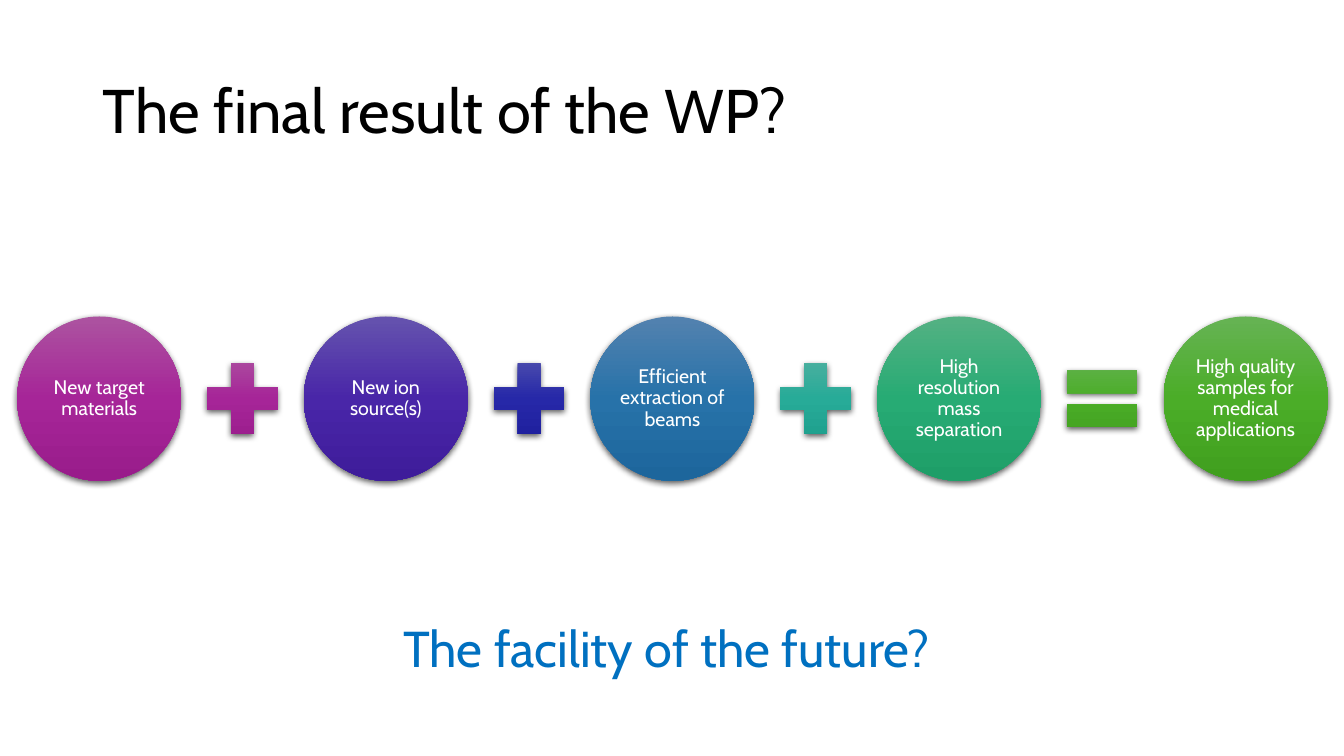
from dataclasses import dataclass

from pptx import Presentation
from pptx.dml.color import RGBColor
from pptx.enum.shapes import MSO_SHAPE
from pptx.enum.text import MSO_ANCHOR, MSO_AUTO_SIZE, PP_ALIGN
from pptx.oxml import parse_xml
from pptx.oxml.ns import nsdecls, qn
from pptx.shapes.autoshape import Shape
from pptx.slide import Slide
from pptx.text.text import TextFrame
from pptx.util import Inches, Pt

SLIDE_WIDTH, SLIDE_HEIGHT = 13.33, 7.5


@dataclass(frozen=True)
class Gradient:
    top: str
    middle: str
    bottom: str


@dataclass(frozen=True)
class Theme:
    font: str = "Cabin"
    title_size: int = 44
    closing_size: int = 36
    label_size: int = 14
    title_color: str = "000000"
    closing_color: str = "0070C0"
    label_color: str = "FFFFFF"
    purple: Gradient = Gradient("AC53A0", "A62598", "991C8B")
    violet: Gradient = Gradient("6553AE", "4926A8", "3E1C9A")
    indigo: Gradient = Gradient("5354AE", "2628A8", "1D1E9B")
    blue: Gradient = Gradient("5382AF", "2772A9", "1D669C")
    teal: Gradient = Gradient("53B0A1", "27AB98", "1D9D8B")
    emerald: Gradient = Gradient("54B183", "27AB74", "1E9E68")
    green: Gradient = Gradient("66B354", "4BAD28", "409F1E")


@dataclass(frozen=True)
class Grid:
    """One row of terms; each column holds a circle and the sign after it."""
    left: float = 0.17
    column: float = 2.8425
    middle: float = 3.955
    circle: float = 1.63
    sign: float = 0.95
    sign_offset: float = 1.76


@dataclass(frozen=True)
class Term:
    label: str
    gradient: Gradient


@dataclass(frozen=True)
class Sign:
    kind: MSO_SHAPE
    gradient: Gradient


THEME = Theme()
GRID = Grid()

TERMS = [
    Term("New target materials", THEME.purple),
    Term("New ion source(s)", THEME.violet),
    Term("Efficient extraction of beams", THEME.blue),
    Term("High resolution mass separation", THEME.emerald),
    Term("High quality samples for medical applications", THEME.green),
]
SIGNS = [
    Sign(MSO_SHAPE.MATH_PLUS, THEME.purple),
    Sign(MSO_SHAPE.MATH_PLUS, THEME.indigo),
    Sign(MSO_SHAPE.MATH_PLUS, THEME.teal),
    Sign(MSO_SHAPE.MATH_EQUAL, THEME.green),
]


def write_text(text_frame: TextFrame, text: str, size: int, color: str) -> None:
    text_frame.text = text
    font = text_frame.paragraphs[0].runs[0].font
    font.name = THEME.font
    font.size = Pt(size)
    font.color.rgb = RGBColor.from_string(color)


def style_shape(shape: Shape, gradient: Gradient) -> None:
    """Give a shape a vertical gradient, no outline and a soft shadow."""
    shape.line.fill.background()
    shape.shadow.inherit = False
    colors = (gradient.top, gradient.middle, gradient.bottom)
    stops = "".join(
        f'<a:gs pos="{index * 50000}"><a:srgbClr val="{color}"/></a:gs>'
        for index, color in enumerate(colors)
    )
    properties = shape.element.spPr
    properties.find(qn("a:ln")).addprevious(parse_xml(
        f'<a:gradFill {nsdecls("a")} rotWithShape="1"><a:gsLst>{stops}</a:gsLst>'
        '<a:lin ang="5400000" scaled="0"/></a:gradFill>'
    ))
    properties.find(qn("a:effectLst")).append(parse_xml(
        f'<a:outerShdw {nsdecls("a")} blurRad="{Pt(4.5)}" dist="{Pt(1.5)}" '
        'dir="5400000" algn="ctr" rotWithShape="0"><a:srgbClr val="000000">'
        '<a:alpha val="63000"/></a:srgbClr></a:outerShdw>'
    ))


def add_row_shape(slide: Slide, kind: MSO_SHAPE, left: float, size: float,
                  gradient: Gradient) -> Shape:
    """Add a square shape centred on the row."""
    shape = slide.shapes.add_shape(
        kind, Inches(left), Inches(GRID.middle - size / 2), Inches(size), Inches(size)
    )
    style_shape(shape, gradient)
    return shape


def add_term(slide: Slide, column: int, term: Term) -> None:
    left = GRID.left + column * GRID.column
    circle = add_row_shape(slide, MSO_SHAPE.OVAL, left, GRID.circle, term.gradient)
    text_frame = circle.text_frame
    write_text(text_frame, term.label, THEME.label_size, THEME.label_color)
    text_frame.word_wrap = True
    text_frame.vertical_anchor = MSO_ANCHOR.MIDDLE
    text_frame.margin_left = text_frame.margin_right = Inches(0.02)
    text_frame.margin_top = text_frame.margin_bottom = Inches(0.02)
    paragraph = text_frame.paragraphs[0]
    paragraph.alignment = PP_ALIGN.CENTER
    paragraph.line_spacing = 0.9


def add_sign(slide: Slide, column: int, sign: Sign) -> None:
    left = GRID.left + column * GRID.column + GRID.sign_offset
    add_row_shape(slide, sign.kind, left, GRID.sign, sign.gradient)


def add_title(slide: Slide) -> None:
    title = slide.shapes.add_textbox(Inches(0.92), Inches(0.4), Inches(11.5), Inches(1.45))
    text_frame = title.text_frame
    write_text(text_frame, "The final result of the WP?", THEME.title_size, THEME.title_color)
    text_frame.word_wrap = True
    text_frame.vertical_anchor = MSO_ANCHOR.MIDDLE
    text_frame.paragraphs[0].line_spacing = 0.9


def add_closing(slide: Slide) -> None:
    closing = slide.shapes.add_textbox(Inches(3.9), Inches(6.07), Inches(5.53), Inches(0.71))
    text_frame = closing.text_frame
    write_text(text_frame, "The facility of the future?", THEME.closing_size,
               THEME.closing_color)
    text_frame.word_wrap = False
    text_frame.auto_size = MSO_AUTO_SIZE.SHAPE_TO_FIT_TEXT


def main() -> None:
    presentation = Presentation()
    presentation.slide_width = Inches(SLIDE_WIDTH)
    presentation.slide_height = Inches(SLIDE_HEIGHT)
    slide = presentation.slides.add_slide(presentation.slide_layouts[6])

    add_title(slide)

    # Equation: circles joined by signs
    for column, term in enumerate(TERMS):
        add_term(slide, column, term)
    for column, sign in enumerate(SIGNS):
        add_sign(slide, column, sign)

    add_closing(slide)
    presentation.save("out.pptx")


if __name__ == "__main__":
    main()
